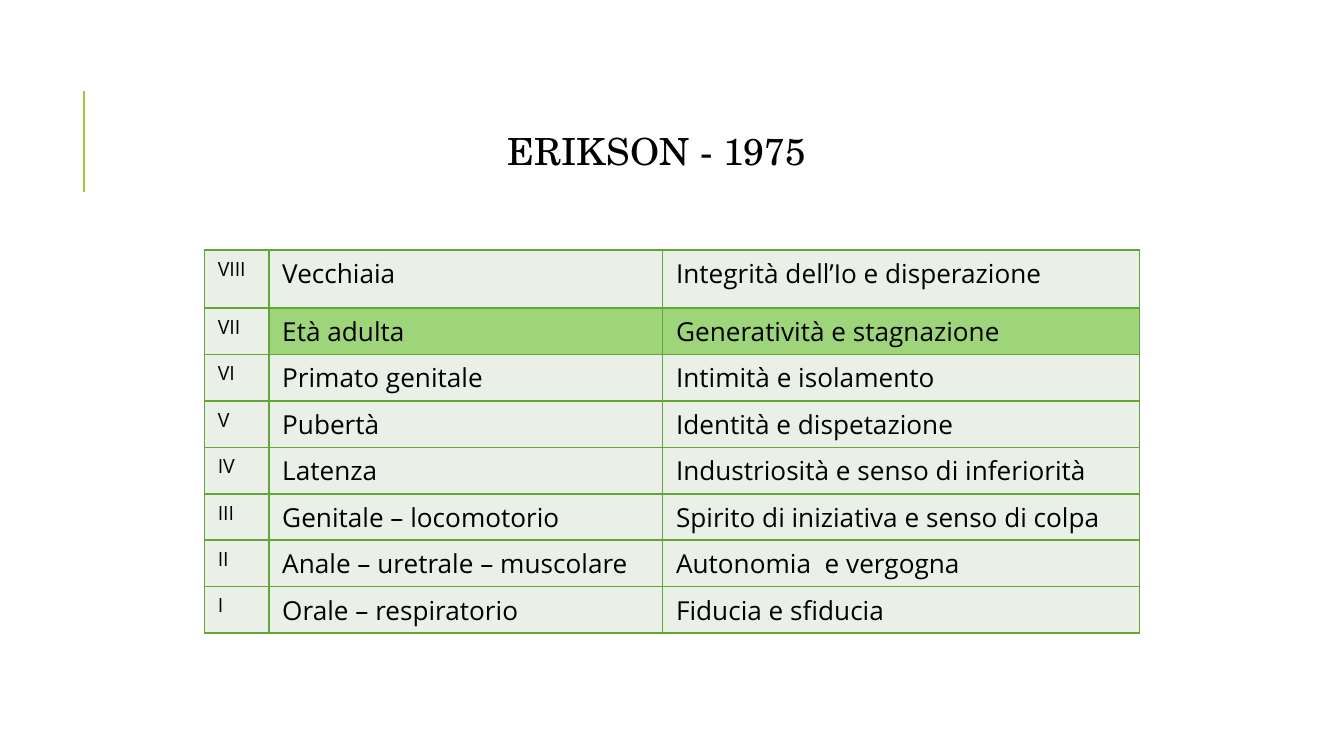
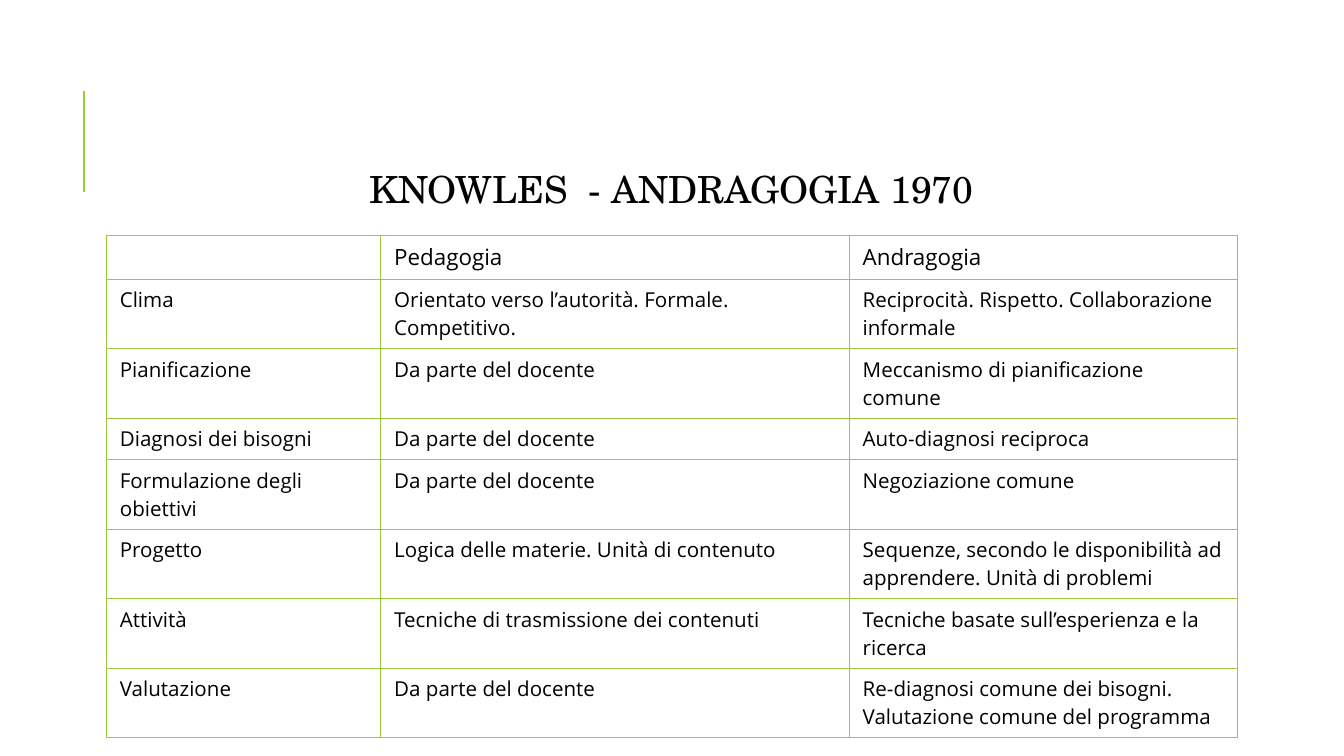
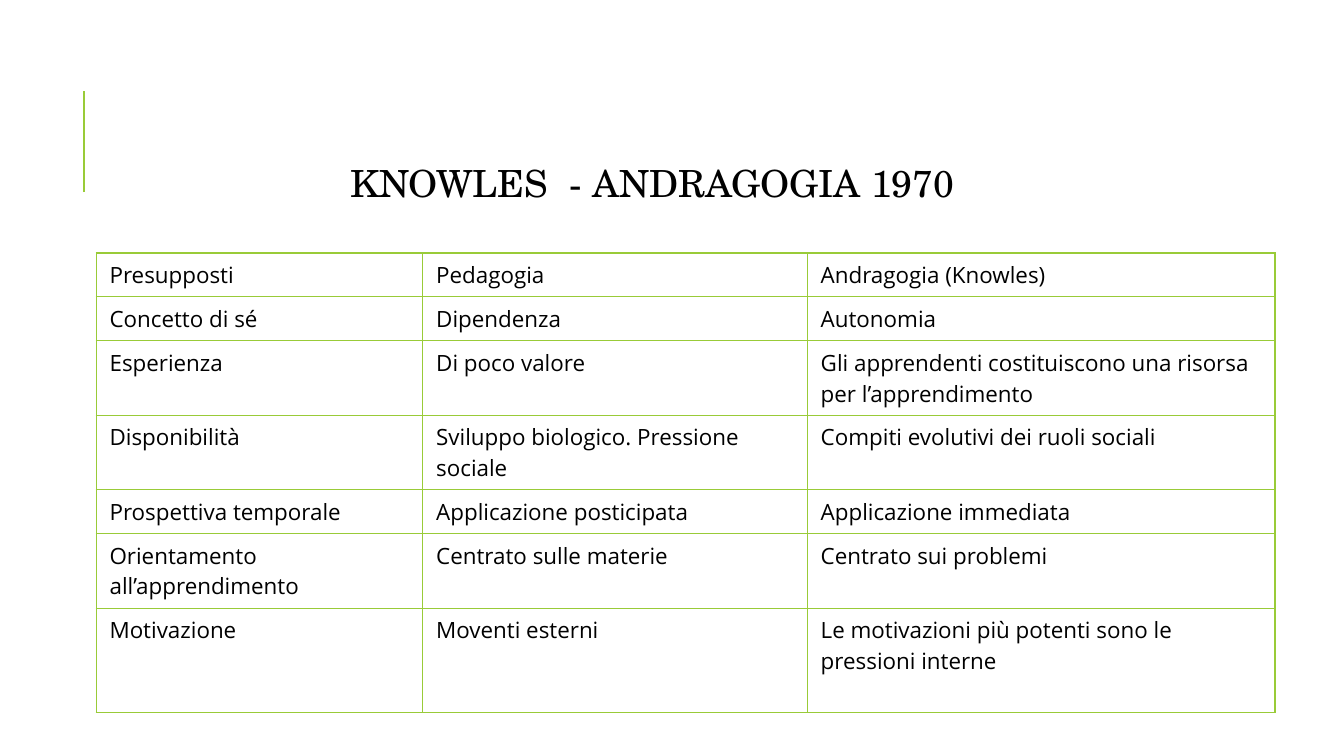
from lxml import etree
from pptx import Presentation
from pptx.dml.color import RGBColor
from pptx.enum import shapes, text
from pptx.oxml.ns import qn
from pptx.util import Pt

BLACK, LIME, GREEN = "000000", "99CB38", "63A537"
PALE, HIGHLIGHT = "EAF0E7", "9ED47A"
TITLE_FONT, BODY_FONT = "TeX Gyre Schola", "Open Sans"
ROW = 22.3

STAGES = [
    ("VIII", "Vecchiaia", "Integrità dell’Io e disperazione"),
    ("VII", "Età adulta", "Generatività e stagnazione"),
    ("VI", "Primato genitale", "Intimità e isolamento"),
    ("V", "Pubertà", "Identità e dispetazione"),
    ("IV", "Latenza", "Industriosità e senso di inferiorità"),
    ("III", "Genitale – locomotorio", "Spirito di iniziativa e senso di colpa"),
    ("II", "Anale – uretrale – muscolare", "Autonomia  e vergogna"),
    ("I", "Orale – respiratorio", "Fiducia e sfiducia"),
]
TEACHER = "Da parte del docente"
PROCESS = [
    ("", "Pedagogia", "Andragogia"),
    ("Clima", "Orientato verso l’autorità. Formale. Competitivo.",
     "Reciprocità. Rispetto. Collaborazione informale"),
    ("Pianificazione", TEACHER, "Meccanismo di pianificazione comune"),
    ("Diagnosi dei bisogni", TEACHER, "Auto-diagnosi reciproca"),
    ("Formulazione degli obiettivi", TEACHER, "Negoziazione comune"),
    ("Progetto", "Logica delle materie. Unità di contenuto",
     "Sequenze, secondo le disponibilità ad apprendere. Unità di problemi"),
    ("Attività", "Tecniche di trasmissione dei contenuti",
     "Tecniche basate sull’esperienza e la ricerca"),
    ("Valutazione", TEACHER,
     "Re-diagnosi comune dei bisogni. Valutazione comune del programma"),
]
ASSUMPTIONS = [
    ("Presupposti", "Pedagogia", "Andragogia (Knowles)"),
    ("Concetto di sé", "Dipendenza", "Autonomia"),
    ("Esperienza", "Di poco valore",
     "Gli apprendenti costituiscono una risorsa per l’apprendimento"),
    ("Disponibilità", "Sviluppo biologico. Pressione sociale",
     "Compiti evolutivi dei ruoli sociali"),
    ("Prospettiva temporale", "Applicazione posticipata", "Applicazione immediata"),
    ("Orientamento all’apprendimento", "Centrato sulle materie", "Centrato sui problemi"),
    ("Motivazione", "Moventi esterni",
     "Le motivazioni più potenti sono le pressioni interne"),
]


def rgb(value):
    return RGBColor.from_string(value)


def set_all(target, **values):
    for name, value in values.items():
        setattr(target, name, value)


def write(p, words, font, size):
    r = p.add_run()
    r.text = words
    set_all(r.font, name=font, size=Pt(size), bold=False)
    r.font.color.rgb = rgb(BLACK)


# Slide frame: title and the thin accent rule
def add_titled_slide(prs, title, box, anchor):
    s = prs.slides.add_slide(prs.slide_layouts[5])
    rule = s.shapes.add_connector(shapes.MSO_CONNECTOR.STRAIGHT,
                                  Pt(45), Pt(103), Pt(45), Pt(49))
    rule.line.width = Pt(1.5)
    rule.line.color.rgb = rgb(LIME)
    etree.SubElement(rule._element.spPr, qn("a:effectLst"))

    sp = s.shapes.title
    set_all(sp, **dict(zip(("left", "top", "width", "height"), map(Pt, box))))
    tf = sp.text_frame
    set_all(tf, word_wrap=True, auto_size=text.MSO_AUTO_SIZE.NONE,
            vertical_anchor=anchor, margin_left=Pt(7.2), margin_right=Pt(7.2),
            margin_top=Pt(7.2), margin_bottom=Pt(7.2))
    p = tf.paragraphs[0]
    p.alignment = text.PP_ALIGN.CENTER
    write(p, title, TITLE_FONT, 20)
    return s


# Table cells
def add_borders(cell, color, width):
    tc_pr = cell._tc.get_or_add_tcPr()
    for side in ("lnL", "lnR", "lnT", "lnB"):
        ln = etree.SubElement(tc_pr, qn("a:" + side), w=str(Pt(width)))
        fill = etree.SubElement(ln, qn("a:solidFill"))
        etree.SubElement(fill, qn("a:srgbClr"), val=color)


def format_cell(cell, words, size, fill, border, pad):
    set_all(cell, margin_left=Pt(7.2), margin_right=Pt(7.2),
            margin_top=Pt(pad), margin_bottom=Pt(pad))
    add_borders(cell, *border)
    if fill:
        cell.fill.solid()
        cell.fill.fore_color.rgb = rgb(fill)
    else:
        cell.fill.background()
    p = cell.text_frame.paragraphs[0]
    if words:
        write(p, words, BODY_FONT, size)
    else:
        etree.SubElement(p._p, qn("a:endParaRPr"), sz=str(size * 100))


def add_grid(s, rows, box, widths, heights, size_at, border,
             fill_at=lambda row, col: None, pad=3.6):
    frame = s.shapes.add_table(len(rows), len(widths), *map(Pt, box))
    table = frame.table
    set_all(table, first_row=False, horz_banding=False)
    for column, width in zip(table.columns, widths):
        column.width = Pt(width)
    for i, (row, height) in enumerate(zip(rows, heights)):
        table.rows[i].height = Pt(height)
        for j, words in enumerate(row):
            format_cell(table.cell(i, j), words, size_at(i, j), fill_at(i, j), border, pad)
    frame.height = Pt(box[3])


# Slides
def erikson_slide(prs):
    s = add_titled_slide(prs, "ERIKSON - 1975", (65, 11.5, 574, 88.5),
                         text.MSO_ANCHOR.BOTTOM)
    add_grid(s, STAGES, (109.5, 134, 501, 187), (34.5, 211, 255.5),
             [31] + [ROW] * 3 + [21, 19.5] + [ROW] * 2,
             lambda row, col: 14 if col else 10.5, (GREEN, 1),
             lambda row, col: HIGHLIGHT if row == 1 and col else PALE, 2.9)


def knowles_slide(prs, title_box, rows, box, widths, heights, header_size, size):
    s = add_titled_slide(prs, "KNOWLES  - ANDRAGOGIA 1970", title_box,
                         text.MSO_ANCHOR.TOP)
    add_grid(s, rows, box, widths, heights,
             lambda row, col: size if row else header_size, (LIME, 0.75))


def main():
    prs = Presentation()
    set_all(prs, slide_width=Pt(720), slide_height=Pt(405))
    erikson_slide(prs)
    knowles_slide(prs, (48, 82, 623.5, 239), PROCESS, (57, 126, 606, 214),
                  (147, 251, 208), [ROW] * 8, 12, 11)
    knowles_slide(prs, (62.5, 78.5, 574, 237.5), ASSUMPTIONS, (51.5, 135.5, 631.5, 219),
                  (175, 206, 250.5), [ROW] * 6 + [56], 12, 12)
    prs.save("out.pptx")


if __name__ == "__main__":
    main()
